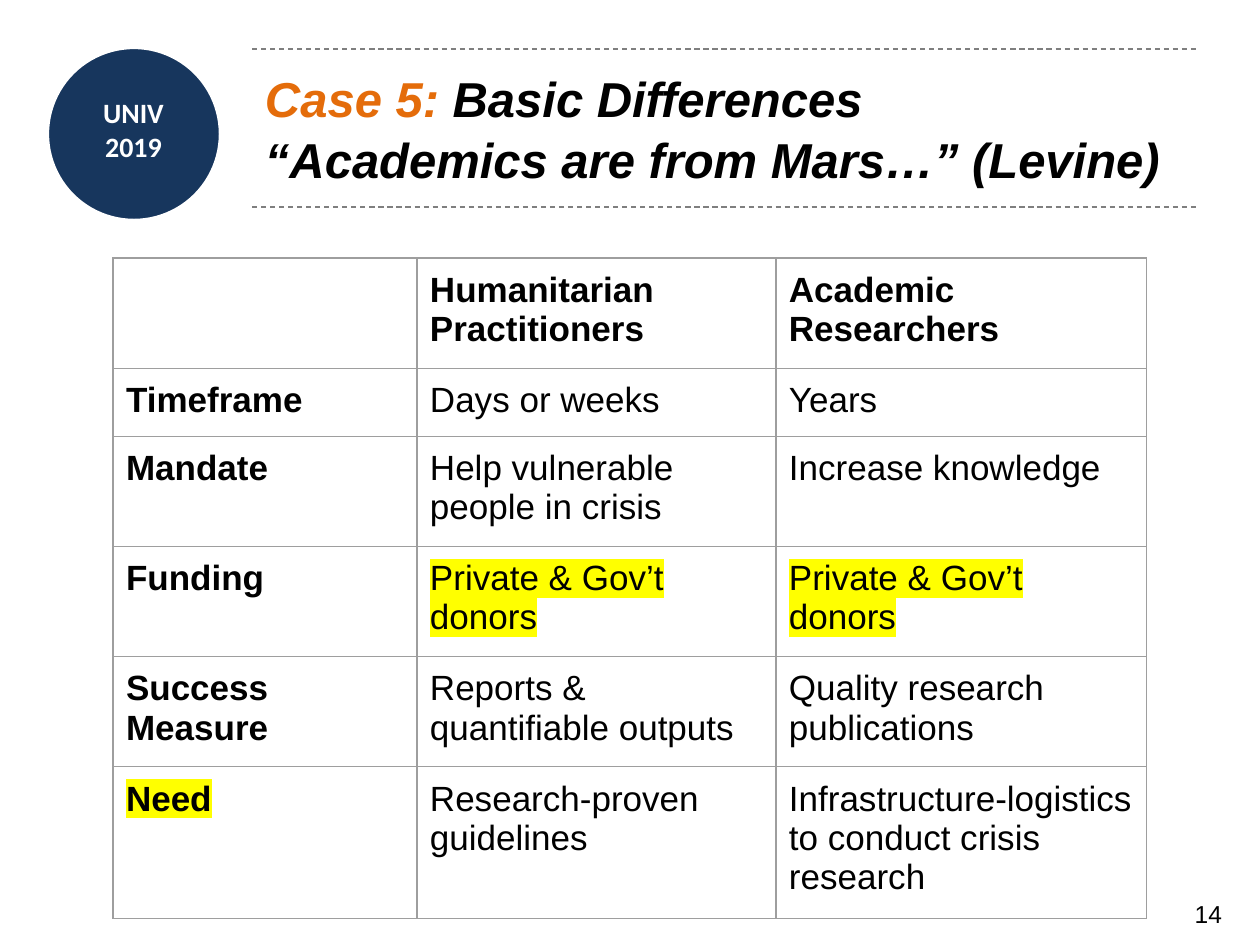
from dataclasses import dataclass

from lxml import etree
from pptx import Presentation
from pptx.dml.color import RGBColor
from pptx.enum.dml import MSO_LINE
from pptx.enum.shapes import MSO_CONNECTOR, MSO_SHAPE
from pptx.enum.text import MSO_ANCHOR, MSO_AUTO_SIZE, PP_ALIGN
from pptx.oxml.ns import qn
from pptx.util import Emu, Pt

DASH = MSO_LINE.DASH
STRAIGHT = MSO_CONNECTOR.STRAIGHT
OVAL = MSO_SHAPE.OVAL
TOP, MIDDLE = MSO_ANCHOR.TOP, MSO_ANCHOR.MIDDLE
NO_FIT = MSO_AUTO_SIZE.NONE
LEFT, CENTER, RIGHT = PP_ALIGN.LEFT, PP_ALIGN.CENTER, PP_ALIGN.RIGHT
TITLE_ONLY = 5
EMU_PER_PX = 914400 / 126


@dataclass(frozen=True)
class Theme:
    white: str = "FFFFFF"
    black: str = "000000"
    navy: str = "17365D"
    orange: str = "E46C0A"
    rule: str = "7F7F7F"
    grid: str = "9E9E9E"
    marker: str = "FFFF00"
    body_font: str = "Arial"
    badge_font: str = "Calibri"
    title_size: int = 28
    table_size: int = 20
    badge_size: int = 16
    number_size: int = 14
    thin: float = 0.75
    thick: float = 2.5


def px(length):
    return Emu(round(length * EMU_PER_PX))


def rgb(color):
    return RGBColor.from_string(color)


def apply(target, values):
    for name, value in values.items():
        setattr(target, name, value)


def box_format(box):
    return dict(zip(("left", "top", "width", "height"), map(px, box)))


def margins(side, vertical):
    return {"margin_left": px(side), "margin_right": px(side),
            "margin_top": px(vertical), "margin_bottom": px(vertical)}


class SlideBuilder:
    def __init__(self, deck, theme):
        self.theme = theme
        self.slide = deck.slides.add_slide(deck.slide_layouts[TITLE_ONLY])
        self.shapes = self.slide.shapes

    def run(self, paragraph, text, size, color=None, font=None, marked=False, **style):
        run = paragraph.add_run()
        run.text = text
        apply(run.font, {"size": Pt(size), "name": font or self.theme.body_font, **style})
        run.font.color.rgb = rgb(color or self.theme.black)
        if marked:
            highlight = etree.Element(qn("a:highlight"))
            etree.SubElement(highlight, qn("a:srgbClr"), val=self.theme.marker)
            run.font._element.find(qn("a:solidFill")).addnext(highlight)

    def circle(self, box, fill, outline):
        circle = self.shapes.add_shape(OVAL, *map(px, box))
        circle.shadow.inherit = False
        circle.fill.solid()
        circle.fill.fore_color.rgb = rgb(fill)
        circle.line.color.rgb = rgb(outline)
        circle.line.width = Pt(self.theme.thick)

    def text(self, box, lines, align, insets, **style):
        frame = self.shapes.add_textbox(*map(px, box)).text_frame
        apply(frame, {"word_wrap": True, "vertical_anchor": TOP, **margins(*insets)})
        for index, line in enumerate(lines):
            paragraph = frame.add_paragraph() if index else frame.paragraphs[0]
            paragraph.alignment = align
            self.run(paragraph, line, **style)

    def dashed_rule(self, left, right, y):
        rule = self.shapes.add_connector(STRAIGHT, px(left), px(y), px(right), px(y))
        apply(rule.line, {"width": Pt(self.theme.thin), "dash_style": DASH})
        rule.line.color.rgb = rgb(self.theme.rule)
        etree.SubElement(rule._element.spPr, qn("a:effectLst"))

    def title(self, box, lead, rest, second_line):
        heading = self.shapes.title
        apply(heading, box_format(box))
        apply(heading.text_frame, {"word_wrap": True, "auto_size": NO_FIT,
                                   "vertical_anchor": MIDDLE, **margins(13, 6)})
        paragraph = heading.text_frame.paragraphs[0]
        apply(paragraph, {"alignment": LEFT, "line_spacing": 1.05})
        style = {"size": self.theme.title_size, "bold": True, "italic": True}
        self.run(paragraph, lead, color=self.theme.orange, **style)
        self.run(paragraph, rest, **style)
        paragraph.add_line_break()
        self.run(paragraph, second_line, **style)

    def cell_borders(self, cell):
        properties = cell._tc.get_or_add_tcPr()
        for index, side in enumerate(("lnL", "lnR", "lnT", "lnB")):
            border = etree.Element(qn(f"a:{side}"), w=str(Pt(self.theme.thin)))
            fill = etree.SubElement(border, qn("a:solidFill"))
            etree.SubElement(fill, qn("a:srgbClr"), val=self.theme.grid)
            properties.insert(index, border)

    def table(self, box, widths, row_height, rows, marked):
        frame = self.shapes.add_table(len(rows), len(widths), *map(px, box))
        grid = frame.table
        apply(grid, {"first_row": False, "horz_banding": False})
        for column, width in zip(grid.columns, widths):
            column.width = px(width)
        for row_index, labels in enumerate(rows):
            grid.rows[row_index].height = px(row_height)
            for column_index, label in enumerate(labels):
                cell = grid.cell(row_index, column_index)
                apply(cell, {"vertical_anchor": TOP, **margins(13, 13)})
                cell.fill.background()
                self.cell_borders(cell)
                if label:
                    self.run(cell.text_frame.paragraphs[0], label, self.theme.table_size,
                             marked=label in marked,
                             bold=row_index == 0 or column_index == 0)
        frame.height = px(box[3])


COMPARISON = [
    ("", "Humanitarian Practitioners", "Academic Researchers"),
    ("Timeframe", "Days or weeks", "Years"),
    ("Mandate", "Help vulnerable people in crisis", "Increase knowledge"),
    ("Funding", "Private & Gov’t donors", "Private & Gov’t donors"),
    ("Success Measure", "Reports & quantifiable outputs", "Quality research publications"),
    ("Need", "Research-proven guidelines",
     "Infrastructure-logistics to conduct crisis research"),
]
MARKED = {"Need", "Private & Gov’t donors"}


def main():
    deck = Presentation()
    apply(deck, {"slide_width": px(1260), "slide_height": px(945)})
    theme = Theme()
    page = SlideBuilder(deck, theme)
    page.circle((47, 47, 174, 174), theme.navy, theme.white)
    page.text((1067, 893, 168, 52), ["14"], RIGHT, (13, 6), size=theme.number_size)
    page.text((54, 96, 159, 78), ["UNIV", "2019"], CENTER, (0, 0), size=theme.badge_size,
              color=theme.white, font=theme.badge_font, bold=True)
    for y in (49, 207):
        page.dashed_rule(252, 1197, y)
    page.title((252, 48, 945, 158), "Case 5:", " Basic Differences ",
               "“Academics are from Mars…” (Levine)")
    page.table((113, 258, 1034, 655), (304, 359, 371), 53, COMPARISON, MARKED)
    deck.save("out.pptx")


if __name__ == "__main__":
    main()
